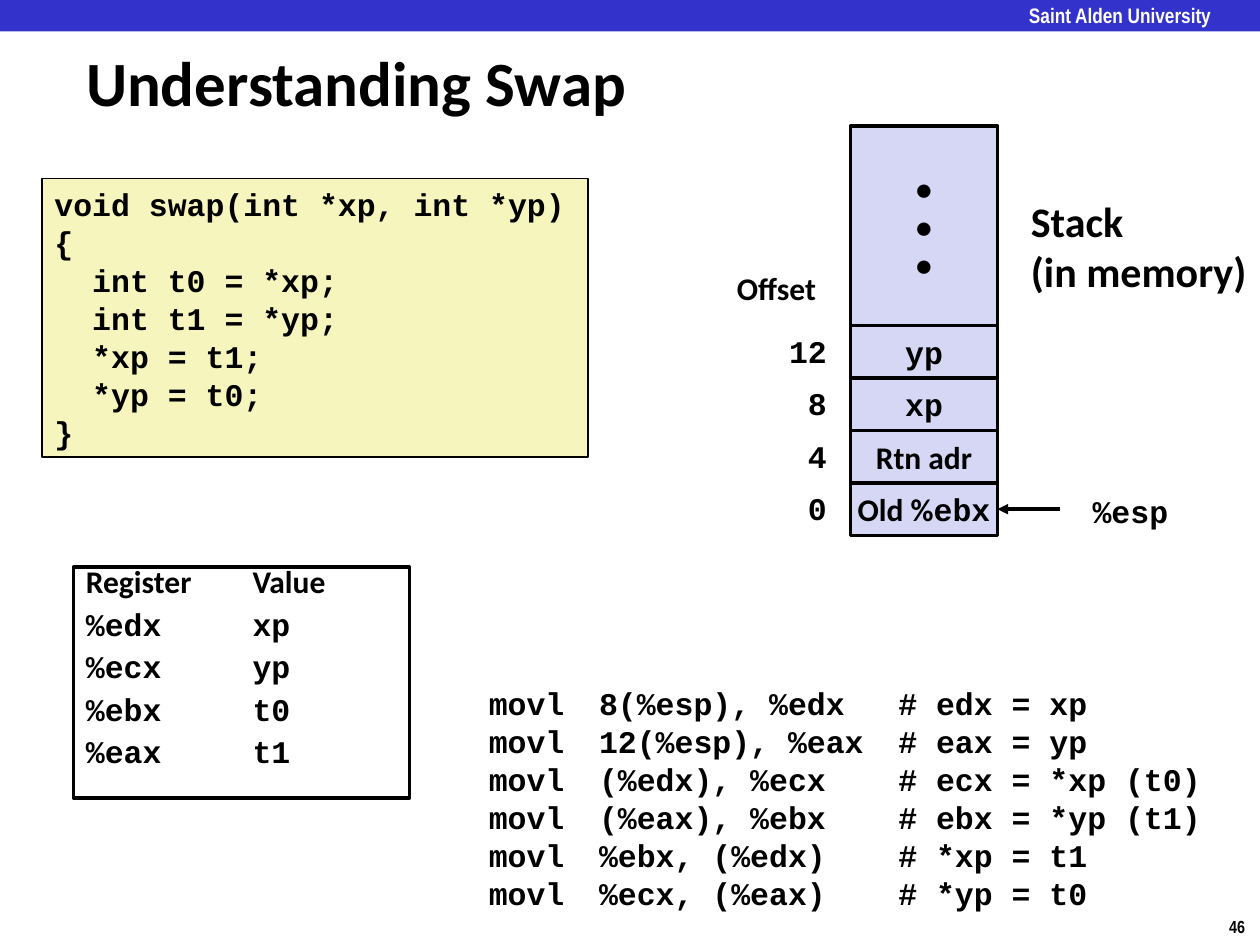
from lxml import etree
from pptx import Presentation, util as u
from pptx.dml.color import RGBColor
from pptx.enum import shapes, text
from pptx.oxml.ns import qn

PX = 9525  # 96 px to the inch
SANS, MONO, NARROW = "Calibri", "Courier New", "Arial Narrow"
BLACK, WHITE, BLUE, CREAM, LILAC = "000000", "FFFFFF", "3333CC", "F6F5BD", "D6D6F5"

# Content: a line is a string, or a list of (text, font) runs
TITLE = "Understanding Swap"
UNIVERSITY = "Saint Alden University"
PAGE = "46"
SWAP_CODE = [
    "void swap(int *xp, int *yp)",
    "{",
    "  int t0 = *xp;",
    "  int t1 = *yp;",
    "  *xp = t1;",
    "  *yp = t0;",
    "}",
]
REGISTERS = [
    [("Register\tValue", SANS)],
    "%edx\txp",
    "%ecx\typ",
    "%ebx\tt0",
    "%eax\tt1",
]
STACK = [
    ("12", "yp"),
    ("8", "xp"),
    ("4", [("Rtn adr", SANS)]),
    ("0", [("Old %", SANS), ("ebx", MONO)]),
]
ASSEMBLY = [
    ("8(%esp), %edx", "edx = xp"),
    ("12(%esp), %eax", "eax = yp"),
    ("(%edx), %ecx", "ecx = *xp (t0)"),
    ("(%eax), %ebx", "ebx = *yp (t1)"),
    ("%ebx, (%edx)", "*xp = t1"),
    ("%ecx, (%eax)", "*yp = t0"),
]


def px(*lengths):
    return [u.Emu(length * PX) for length in lengths]


def rgb(value):
    return RGBColor.from_string(value)


def write(shape, lines, font=MONO, size=18, color=BLACK, align=text.PP_ALIGN.LEFT,
          anchor=text.MSO_ANCHOR.TOP, wrap=False, tabs=(), pitch=None, gap=0):
    frame = shape.text_frame
    frame.word_wrap, frame.vertical_anchor = wrap, anchor
    for i, line in enumerate(lines):
        par = frame.add_paragraph() if i else frame.paragraphs[0]
        par.alignment = align
        par.space_before = u.Pt(gap if i else 0)
        if pitch:
            par.line_spacing = u.Pt(pitch)
        if tabs:
            tab_list = etree.SubElement(par._p.get_or_add_pPr(), qn("a:tabLst"))
            for tab in tabs:
                etree.SubElement(tab_list, qn("a:tab"), pos=str(tab * PX), algn="l")
        for words, face in [(line, font)] if isinstance(line, str) else line:
            run = par.add_run()
            run.text = words
            run.font.name, run.font.size, run.font.bold = face, u.Pt(size), True
            run.font.color.rgb = rgb(color)
    return frame


def box(slide, at, fill=None, line_width=0):
    shape = slide.shapes.add_shape(shapes.MSO_SHAPE.RECTANGLE, *px(*at))
    shape.shadow.inherit = False
    if fill:
        shape.fill.solid()
        shape.fill.fore_color.rgb = rgb(fill)
    else:
        shape.fill.background()
    if line_width:
        shape.line.color.rgb = rgb(BLACK)
        shape.line.width = u.Pt(line_width)
    else:
        shape.line.fill.background()
    return shape


def label(slide, at, lines, **style):
    return write(slide.shapes.add_textbox(*px(*at)), lines, **style)


def draw_stack(slide):
    left, top, width, row = 648, 248, 112, 40
    middle = dict(align=text.PP_ALIGN.CENTER, anchor=text.MSO_ANCHOR.MIDDLE)
    for i, (offset, content) in enumerate(STACK):
        y = top + i * row
        write(box(slide, (left, y, width, row), LILAC, 2), [content], **middle)
        frame = label(slide, (592, y, 62, 38), [offset],
                      align=text.PP_ALIGN.RIGHT, wrap=True)
        frame.margin_left, frame.margin_right = px(0, 24)
    write(box(slide, (left, 96, width, top - 96), LILAC, 2), ["•"] * 3, font=SANS, **middle)
    label(slide, (552, 200, 81, 38), ["Offset"], font=SANS)
    label(slide, (776, 144, 185, 87), ["Stack", "(in memory)"], font=SANS, size=24)

    # Stack pointer arrow, aimed at the last row
    right = left + width
    arrow = slide.shapes.add_connector(
        shapes.MSO_CONNECTOR.STRAIGHT, *px(right + 48, y + 20, right, y + 20))
    arrow.line.color.rgb = rgb(BLACK)
    arrow.line.width = u.Pt(2)
    etree.SubElement(arrow.line._get_or_add_ln(), qn("a:tailEnd"), type="triangle")
    etree.SubElement(arrow._element.spPr, qn("a:effectLst"))
    label(slide, (823, y + 2, 77, 38), ["%esp"])


def main():
    prs = Presentation()
    prs.slide_width, prs.slide_height = px(960, 720)
    slide = prs.slides.add_slide(prs.slide_layouts[5])

    # Header band, title and page number
    box(slide, (0, 0, 961, 24), BLUE)
    header = label(slide, (784, 2, 160, 18), [UNIVERSITY],
                   font=NARROW, size=12, color=WHITE, wrap=True)
    header.margin_left = header.margin_right = header.margin_top = header.margin_bottom = 0
    title = slide.shapes.title
    title.left, title.top, title.width, title.height = px(56, 32, 669, 60)
    write(title, [TITLE], font=SANS, size=36, anchor=text.MSO_ANCHOR.MIDDLE, wrap=True)
    label(slide, (927, 693, 33, 26), [PAGE], font=NARROW, size=10)

    # Source code, registers, stack and assembly
    write(box(slide, (32, 136, 416, 212), CREAM, 1), SWAP_CODE, wrap=True, pitch=21.7)
    write(box(slide, (56, 432, 256, 176), None, 2), REGISTERS,
          wrap=True, tabs=[127], pitch=15.3, gap=9)
    draw_stack(slide)
    label(slide, (321, 516, 624, 184),
          [f"\tmovl\t{operands}\t# {effect}" for operands, effect in ASSEMBLY],
          wrap=True, tabs=[42, 126, 354], pitch=21.7)

    prs.save("out.pptx")


if __name__ == "__main__":
    main()
